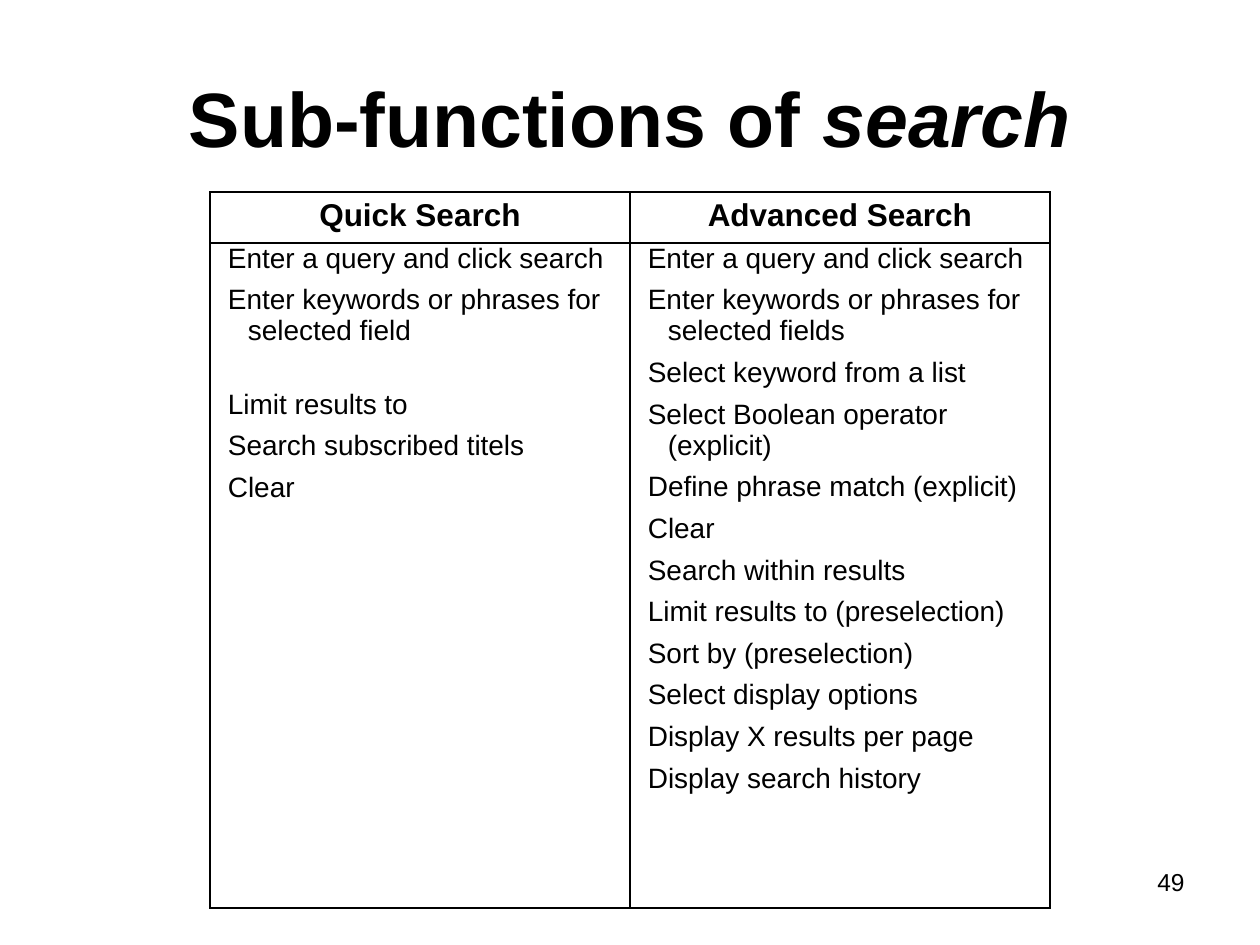
from pptx import Presentation
from pptx import util as u
from pptx.dml import color
from pptx.enum import text
from pptx.oxml import parse_xml
from pptx.oxml import ns

PX = 914400 / 126


def px(*lengths):
    return [u.Emu(round(length * PX)) for length in lengths]


def add_span(para, words, size, bold=False, italic=False):
    span = para.add_run()
    span.text = words
    span.font.name = "Arial"
    span.font.size = u.Pt(size)
    span.font.bold = bold
    span.font.italic = italic
    span.font.color.rgb = color.RGBColor.from_string("000000")


deck = Presentation()
deck.slide_width, deck.slide_height = px(1260, 945)
page = deck.slides.add_slide(deck.slide_layouts[5])

title = page.shapes.title
title.left, title.top, title.width, title.height = px(63, 38, 1134, 157)
title.text_frame.vertical_anchor = text.MSO_ANCHOR.MIDDLE
para = title.text_frame.paragraphs[0]
para.alignment = text.PP_ALIGN.CENTER
add_span(para, "Sub-functions of ", 44, bold=True)
add_span(para, "search", 44, bold=True, italic=True)

number_box = page.shapes.add_textbox(*px(903, 861, 294, 66))
number_box.text_frame.word_wrap = True
para = number_box.text_frame.paragraphs[0]
para.alignment = text.PP_ALIGN.RIGHT
add_span(para, "49", 14)

columns = {
    "Quick Search": [
        "Enter a query and click search",
        "Enter keywords or phrases for selected field",
        "Limit results to",
        "Search subscribed titels",
        "Clear",
    ],
    "Advanced Search": [
        "Enter a query and click search",
        "Enter keywords or phrases for selected fields",
        "Select keyword from a list",
        "Select Boolean operator (explicit)",
        "Define phrase match (explicit)",
        "Clear",
        "Search within results",
        "Limit results to (preselection)",
        "Sort by (preselection)",
        "Select display options",
        "Display X results per page",
        "Display search history",
    ],
}

table = page.shapes.add_table(2, 2, *px(210, 192, 840, 716)).table
table.first_row = False
table.horz_banding = False
table.rows[0].height, table.rows[1].height = px(51, 665)

for col, (heading, functions) in enumerate(columns.items()):
    table.columns[col].width = px(420)[0]

    header = table.cell(0, col)
    para = header.text_frame.paragraphs[0]
    para.alignment = text.PP_ALIGN.CENTER
    add_span(para, heading, 18, bold=True)

    body = table.cell(1, col)
    body.margin_left, body.margin_right, body.margin_top, body.margin_bottom = px(6, 6, 0, 0)
    for row, function in enumerate(functions):
        para = body.text_frame.add_paragraph() if row else body.text_frame.paragraphs[0]
        para.space_before = u.Pt(24 if function == "Limit results to" else 6)
        indent = para._p.get_or_add_pPr()
        indent.set("marL", str(px(32)[0]))
        indent.set("indent", str(px(-20)[0]))
        add_span(para, function, 16)

for cell in table.iter_cells():
    for side in ("lnL", "lnR", "lnT", "lnB"):
        cell._tc.get_or_add_tcPr().append(parse_xml(
            f'<a:{side} {ns.nsdecls("a")} w="{u.Pt(1)}"><a:solidFill>'
            f'<a:srgbClr val="000000"/></a:solidFill></a:{side}>'))
    cell.fill.solid()
    cell.fill.fore_color.rgb = color.RGBColor.from_string("FFFFFF")

deck.save("out.pptx")
